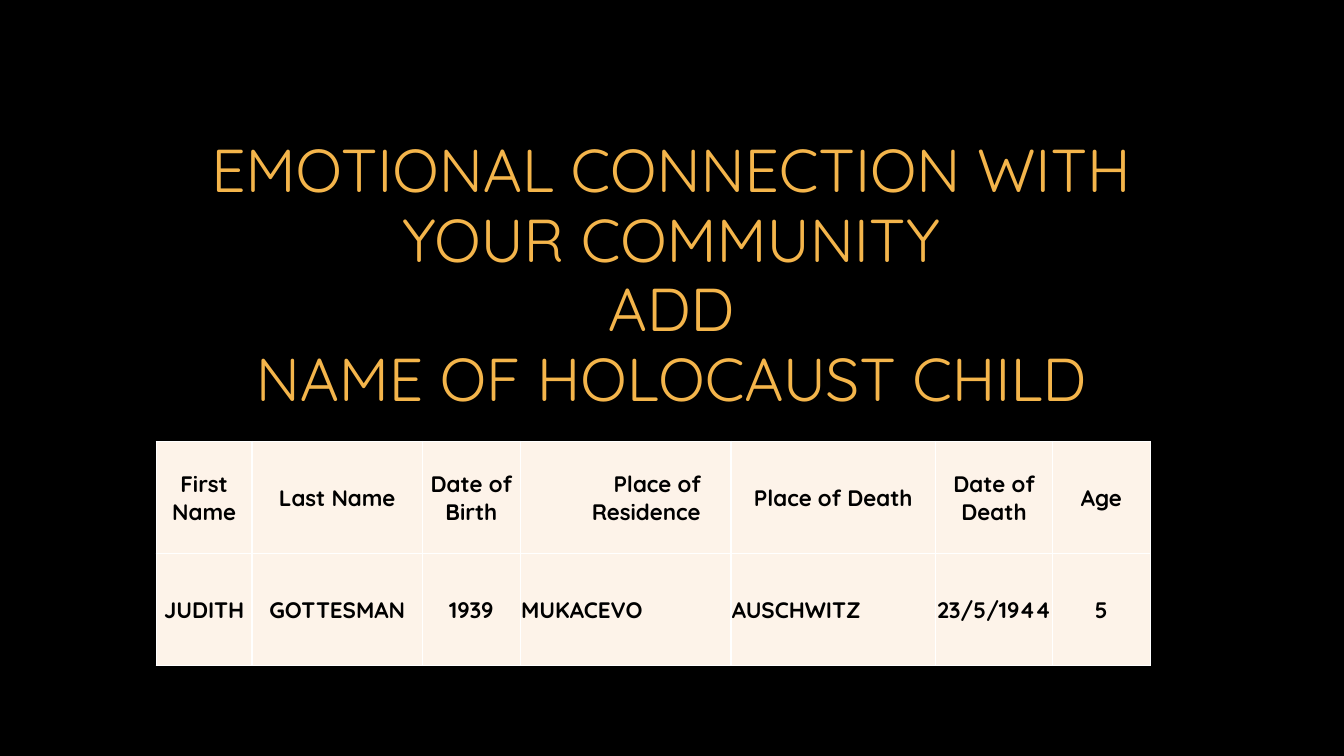
from dataclasses import dataclass

from lxml.etree import SubElement
from pptx import Presentation
from pptx.dml.color import RGBColor
from pptx.enum.text import MSO_ANCHOR, PP_ALIGN
from pptx.oxml.ns import qn
from pptx.util import Inches, Pt


@dataclass(frozen=True)
class Theme:
    font: str = "Quicksand"
    background: str = "000000"
    heading: str = "F4B54B"
    cell: str = "FDF3E9"
    ink: str = "000000"
    border: str = "FFFFFF"
    heading_size: float = 43.2
    cell_size: float = 16
    border_width: float = 1
    heading_spacing: float = 0.96


class SlideBuilder:
    """Places elements on one slide; positions are shares of its size."""

    def __init__(self, deck, theme):
        self.deck, self.theme = deck, theme
        self.slide = deck.slides.add_slide(deck.slide_layouts[6])
        backdrop = self.slide.background.fill
        backdrop.solid()
        backdrop.fore_color.rgb = RGBColor.from_string(theme.background)

    def area(self, left, top, width, height):
        across, down = self.deck.slide_width, self.deck.slide_height
        return (round(left * across), round(top * down),
                round(width * across), round(height * down))

    def add_run(self, paragraph, wording, size, color, bold=False):
        run = paragraph.add_run()
        run.text = wording
        run.font.name = self.theme.font
        run.font.size = Pt(size)
        run.font.bold = bold
        run.font.color.rgb = RGBColor.from_string(color)

    def heading(self, lines, area):
        frame = self.slide.shapes.add_textbox(*self.area(*area)).text_frame
        frame.word_wrap = True
        frame.vertical_anchor = MSO_ANCHOR.BOTTOM
        paragraph = frame.paragraphs[0]
        paragraph.alignment = PP_ALIGN.CENTER
        paragraph.line_spacing = self.theme.heading_spacing
        for index, line in enumerate(lines):
            if index:
                paragraph.add_line_break()
            self.add_run(paragraph, line, self.theme.heading_size, self.theme.heading)

    def border(self, cell):
        properties = cell._tc.get_or_add_tcPr()
        for position, side in enumerate(("a:lnL", "a:lnR", "a:lnT", "a:lnB")):
            edge = SubElement(properties, qn(side), w=str(Pt(self.theme.border_width)))
            SubElement(SubElement(edge, qn("a:solidFill")), qn("a:srgbClr"),
                       val=self.theme.border)
            properties.insert(position, edge)

    def fill_cell(self, cell, wording, alignment, right_inset):
        cell.fill.solid()
        cell.fill.fore_color.rgb = RGBColor.from_string(self.theme.cell)
        cell.vertical_anchor = MSO_ANCHOR.MIDDLE
        cell.margin_left = cell.margin_top = Inches(0.01)
        cell.margin_right, cell.margin_bottom = Inches(right_inset), 0
        paragraph = cell.text_frame.paragraphs[0]
        paragraph.alignment = alignment
        self.add_run(paragraph, wording, self.theme.cell_size, self.theme.ink, bold=True)
        self.border(cell)

    def table(self, rows, column_widths, area, exceptions):
        """Draw centred cells; exceptions maps (row, column) to alignment and inset."""
        grid = self.slide.shapes.add_table(
            len(rows), len(column_widths), *self.area(*area)).table
        grid.first_row = grid.horz_banding = False
        for column, width in zip(grid.columns, column_widths):
            column.width = Inches(width)
        for r, entries in enumerate(rows):
            for c, wording in enumerate(entries):
                alignment, inset = exceptions.get((r, c), (PP_ALIGN.CENTER, 0.01))
                self.fill_cell(grid.cell(r, c), wording, alignment, inset)


def main():
    deck = Presentation()
    deck.slide_width, deck.slide_height = Inches(13.33), Inches(7.5)
    builder = SlideBuilder(deck, Theme())

    builder.heading(
        ("EMOTIONAL CONNECTION WITH YOUR COMMUNITY", "ADD", "NAME OF HOLOCAUST CHILD"),
        (1.91 / 13.33, 0.67 / 7.5, 9.49 / 13.33, 3.5 / 7.5))

    child_record = (
        ("First Name", "Last Name", "Date of Birth", "Place of Residence",
         "Place of Death", "Date of Death", "Age"),
        ("JUDITH", "GOTTESMAN", "1939", "MUKACEVO", "AUSCHWITZ", "23/5/1944", "5"),
    )
    builder.table(
        child_record,
        column_widths=(0.95, 1.69, 0.97, 2.09, 2.03, 1.16, 0.97),
        area=(1.55 / 13.33, 4.38 / 7.5, 9.86 / 13.33, 2.22 / 7.5),
        exceptions={(0, 3): (PP_ALIGN.RIGHT, 0.3),
                    (1, 3): (PP_ALIGN.LEFT, 0.01),
                    (1, 4): (PP_ALIGN.LEFT, 0.01)})

    deck.save("out.pptx")


if __name__ == "__main__":
    main()
